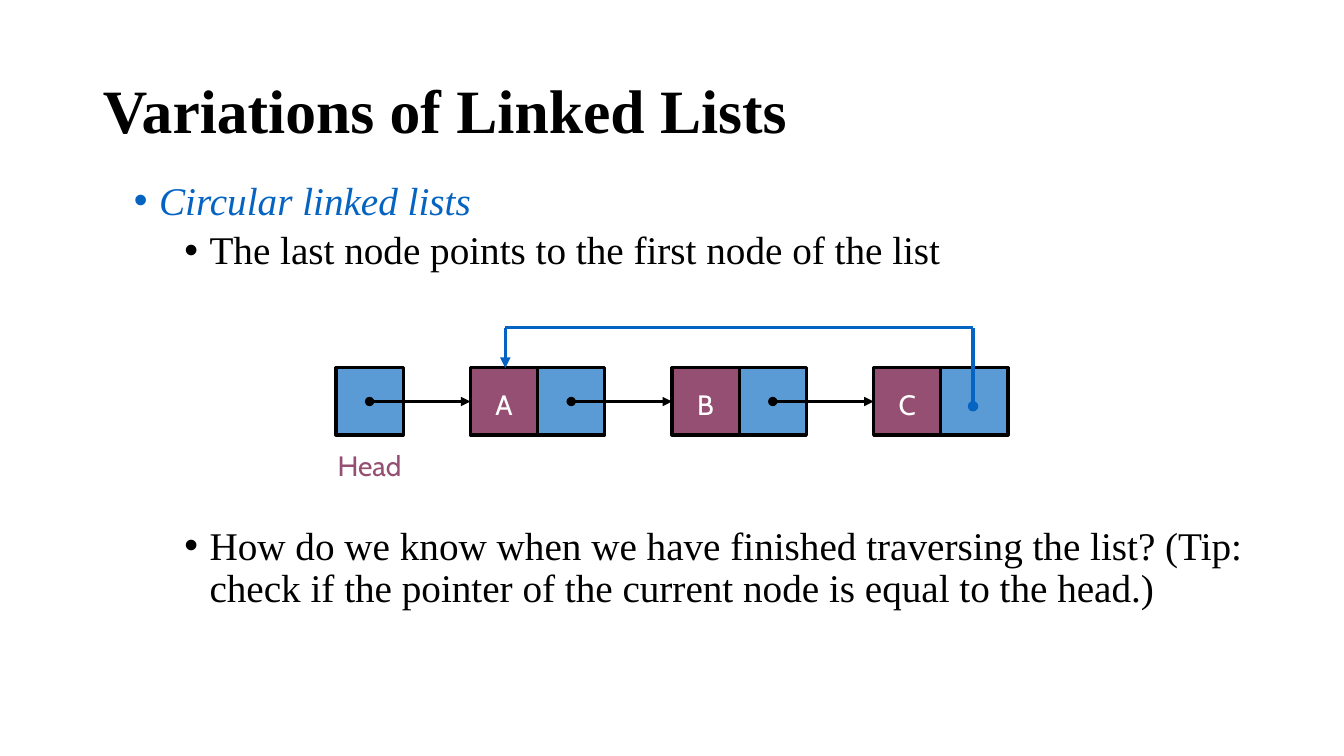
import pptx
import pptx.util
import pptx.dml.color
import pptx.enum.shapes
import pptx.enum.text
import pptx.oxml.ns
from lxml import etree

Inches, Pt = pptx.util.Inches, pptx.util.Pt
qn = pptx.oxml.ns.qn
ALIGN = pptx.enum.text.PP_ALIGN
COLORS = {
    name: pptx.dml.color.RGBColor.from_string(value)
    for name, value in {
        "black": "000000", "white": "FFFFFF", "link": "0563C1",
        "pointer": "5B9BD5", "data": "954F72",
    }.items()
}
SERIF, SANS = "Times New Roman", "Cabin"

deck = pptx.Presentation()
deck.slide_width, deck.slide_height = Inches(13.33), Inches(7.5)
page = deck.slides.add_slide(deck.slide_layouts[5])

# The diagram sits on a grid of twenty columns
CELL = deck.slide_width / 20
ROW_TOP = Inches(3.65)
ROW_MIDDLE = ROW_TOP + CELL / 2
LOOP_TOP = Inches(3.25)


def format_text(para, size, font, color, align):
    para.alignment = align
    para.font.size, para.font.name = Pt(size), font
    para.font.color.rgb = COLORS[color]


def add_link(start, end, color, width, head=None, tail=None):
    """Draw a straight line; start and end are (column, y) pairs."""
    link = page.shapes.add_connector(
        pptx.enum.shapes.MSO_CONNECTOR.STRAIGHT,
        int(start[0] * CELL), int(start[1]), int(end[0] * CELL), int(end[1]))
    link.line.color.rgb, link.line.width = COLORS[color], Pt(width)
    outline = link.line._get_or_add_ln()
    for tag, kind in (("a:headEnd", head), ("a:tailEnd", tail)):
        if kind:
            etree.SubElement(outline, qn(tag), type=kind)
    etree.SubElement(link._element.spPr, qn("a:effectLst"))


title = page.shapes.title
title.left, title.top, title.width, title.height = map(Inches, (0.92, 0.4, 11.5, 1.45))
title.text_frame.text = "Variations of Linked Lists"
title.text_frame.vertical_anchor = pptx.enum.text.MSO_ANCHOR.MIDDLE
heading = title.text_frame.paragraphs[0]
heading.line_spacing = 0.9
heading.font.bold = True
format_text(heading, 44, SERIF, "black", ALIGN.LEFT)

# Text, level, space before in points (the last one clears the diagram), colour
bullets = [
    ("Circular linked lists", 0, 10, "link"),
    ("The last node points to the first node of the list", 1, 5, "black"),
    ("How do we know when we have finished traversing the list? (Tip: "
     "check if the pointer of the current node is equal to the head.)", 1, 181, "black"),
]
body = page.shapes.add_textbox(*map(Inches, (1.23, 1.75, 11.38, 4.92)))
body.text_frame.word_wrap = True
for index, (text, level, gap, color) in enumerate(bullets):
    para = body.text_frame.paragraphs[0] if index == 0 else body.text_frame.add_paragraph()
    para.text, para.level = text, level
    para.line_spacing, para.space_before = 0.9, Pt(gap)
    para.font.italic = level == 0
    format_text(para, 28, SERIF, color, ALIGN.LEFT)
    props = para._p.get_or_add_pPr()
    props.set("marL", str(Inches(0.25 + 0.5 * level)))
    props.set("indent", str(Inches(-0.25)))
    marker_font = etree.Element(qn("a:buFont"), typeface="Arial")
    marker = etree.Element(qn("a:buChar"), char="•")
    props.find(qn("a:defRPr")).addprevious(marker_font)
    marker_font.addnext(marker)

# Column, fill and label of each cell: the head, then three nodes of two cells
cells = [(5, "pointer", "")]
for node, label in enumerate("ABC"):
    column = 7 + 3 * node
    cells += [(column + 1, "pointer", ""), (column, "data", label)]
for column, fill, label in cells:
    box = page.shapes.add_shape(
        pptx.enum.shapes.MSO_SHAPE.RECTANGLE,
        int(column * CELL), ROW_TOP, int(CELL), int(CELL))
    box.shadow.inherit = False
    box.fill.solid()
    box.fill.fore_color.rgb = COLORS[fill]
    box.line.color.rgb, box.line.width = COLORS["black"], Pt(2.25)
    if label:
        box.text_frame.margin_top = Inches(0.11)
        box.text_frame.text = label
        format_text(box.text_frame.paragraphs[0], 20, SANS, "white", ALIGN.CENTER)

# The caption is wider than the head cell and centred beneath it
caption = page.shapes.add_textbox(
    int(4.75 * CELL), Inches(4.4), int(1.5 * CELL), Inches(0.43))
caption.text_frame.margin_left = caption.text_frame.margin_right = 0
caption.text_frame.word_wrap = False
caption.text_frame.text = "Head"
format_text(caption.text_frame.paragraphs[0], 20, SANS, "data", ALIGN.CENTER)

for column in (5, 8, 11):
    add_link((column + 0.5, ROW_MIDDLE), (column + 2, ROW_MIDDLE),
             "black", 2.25, head="oval", tail="triangle")

# The last pointer loops back to the first node
loop = [(14.48, Inches(4.03)), (14.48, LOOP_TOP), (7.52, LOOP_TOP), (7.52, ROW_TOP)]
loop_ends = [("oval", None), (None, None), (None, "triangle")]
for start, end, (head, tail) in zip(loop, loop[1:], loop_ends):
    add_link(start, end, "link", 2.5, head, tail)

deck.save("out.pptx")
